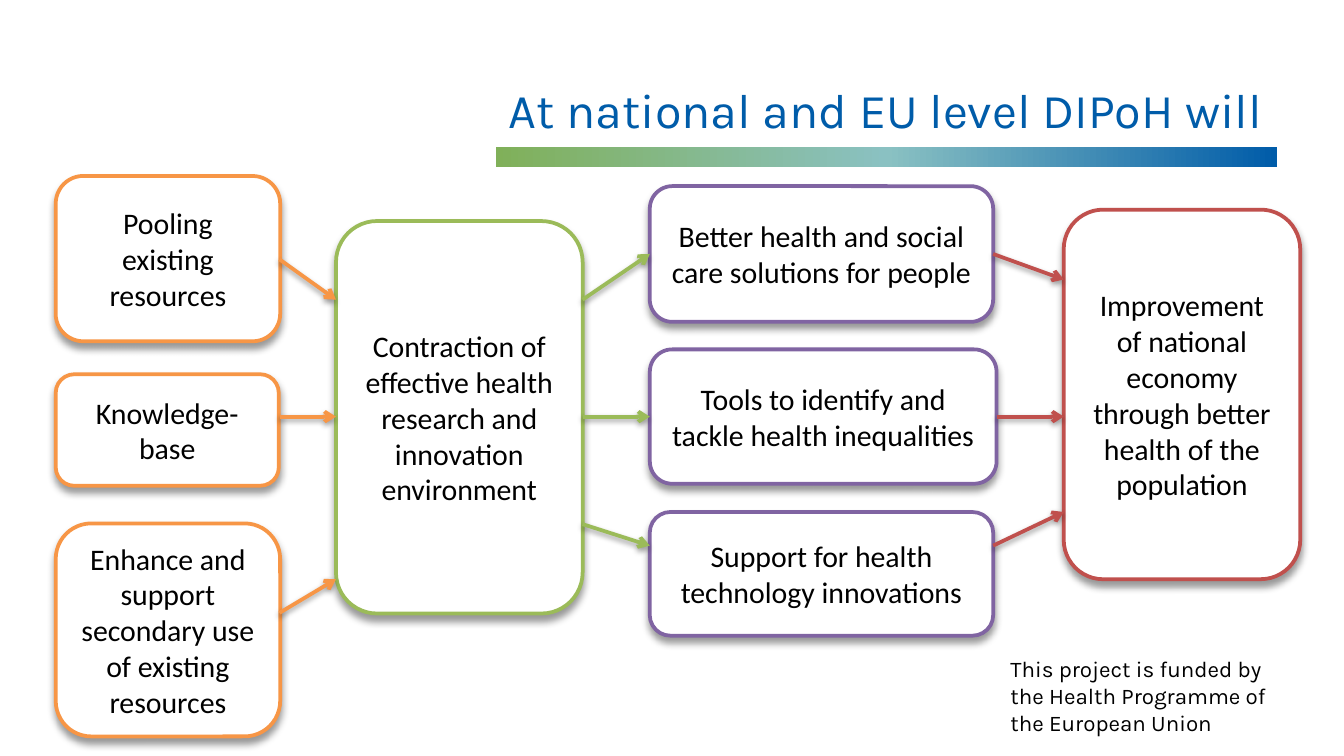
import pptx
import pptx.util
import pptx.oxml
import pptx.oxml.ns
import pptx.dml.color
import pptx.enum.text
import pptx.enum.shapes
import lxml.etree

SCALE = 4572
HUES = {
    "ink": "000000", "paper": "FFFFFF", "title": "005CA9",
    "green": "80B059", "teal": "8AC1C2", "blue": "005CA9",
    "source": "F79646", "hub": "9BBB59", "gain": "8064A2", "goal": "C0504D",
}
ALIGN = pptx.enum.text.PP_ALIGN
ANCHOR = pptx.enum.text.MSO_ANCHOR
KIND = pptx.enum.shapes.MSO_SHAPE


def emu(*nums):
    """Turn px lengths into EMU."""
    return [pptx.util.Emu(num * SCALE) for num in nums]


def hue(name):
    """Give the colour of a name."""
    return pptx.dml.color.RGBColor.from_string(HUES[name])


def apply(item, form):
    """Set attributes of an item from a dict."""
    for key, value in form.items():
        setattr(item, key, value)


def write(shape, text, size, face, tint, align, anchor):
    """Fill a shape with one formatted paragraph."""
    frame = shape.text_frame
    apply(frame, {"word_wrap": True, "vertical_anchor": anchor})
    para = frame.paragraphs[0]
    apply(para, {"text": text, "alignment": align})
    apply(para.font, {"size": pptx.util.Pt(size), "name": face})
    para.font.color.rgb = hue(tint)


def shade(parent, alpha, blur, dist):
    """Add a soft shadow that falls straight down."""
    shadow = lxml.etree.SubElement(parent, pptx.oxml.ns.qn("a:outerShdw"))
    form = {"blurRad": blur * 12700, "dist": dist * 12700, "dir": 5400000}
    for key, value in form.items():
        shadow.set(key, str(int(value)))
    shadow.set("rotWithShape", "0")
    color = lxml.etree.SubElement(shadow, pptx.oxml.ns.qn("a:srgbClr"), val=HUES["ink"])
    lxml.etree.SubElement(color, pptx.oxml.ns.qn("a:alpha"), val=str(alpha * 1000))


def stroke(line, tint):
    """Draw a line in a two point tint."""
    line.color.rgb = hue(tint)
    line.width = pptx.util.Pt(2)


def heading(slide, box):
    """Place the title above its gradient bar."""
    left, top, wide, high = box
    title = slide.shapes.add_textbox(*emu(left, top, wide, high - 32))
    write(title, "At national and EU level DIPoH will", 26, "Karla", "title",
          ALIGN.RIGHT, ANCHOR.BOTTOM)
    bar = slide.shapes.add_shape(
        KIND.RECTANGLE, *emu(left + 638, top + high - 29, wide - 638, 29))
    bar.shadow.inherit = False
    stops = "".join(
        f'<a:gs pos="{spot * 50000}"><a:srgbClr val="{HUES[name]}"/></a:gs>'
        for spot, name in enumerate(("green", "teal", "blue")))
    blend = pptx.oxml.parse_xml(
        f'<a:gradFill {pptx.oxml.ns.nsdecls("a")}><a:gsLst>{stops}</a:gsLst>'
        '<a:lin ang="0" scaled="0"/></a:gradFill>')
    bar._element.spPr.insert(2, blend)
    bar.line.fill.background()


def column(slide, box, tint, nodes):
    """Place a column of rounded nodes given as top, width, height, text."""
    left, top = box[:2]
    for down, wide, high, text in nodes:
        node = slide.shapes.add_shape(
            KIND.ROUNDED_RECTANGLE, *emu(left, top + down, wide, high))
        node.fill.solid()
        node.fill.fore_color.rgb = hue("paper")
        stroke(node.line, tint)
        node.shadow.inherit = False
        shade(node._element.spPr.find(pptx.oxml.ns.qn("a:effectLst")), 40, 4, 3)
        write(node, text, 16, "Calibri", "ink", ALIGN.CENTER, ANCHOR.MIDDLE)


def links(slide, box, tint, rows):
    """Cross a gap with arrows given as indent, start and end height."""
    left, top, wide = box[:3]
    for inset, start, end in rows:
        link = slide.shapes.add_connector(
            pptx.enum.shapes.MSO_CONNECTOR.STRAIGHT,
            *emu(left + inset, top + start, left + wide, top + end))
        stroke(link.line, tint)
        props = link._element.spPr
        line = props.find(pptx.oxml.ns.qn("a:ln"))
        lxml.etree.SubElement(line, pptx.oxml.ns.qn("a:tailEnd"), type="arrow")
        effect = lxml.etree.SubElement(props, pptx.oxml.ns.qn("a:effectLst"))
        shade(effect, 38, 3.1, 1.6)


def footer(slide, box):
    """Place the funding note."""
    note = slide.shapes.add_textbox(*emu(*box))
    write(note, "This project is funded by the Health Programme of the European Union",
          12, "Karla", "ink", ALIGN.LEFT, ANCHOR.TOP)


def main():
    """Build and save the slide."""
    deck = pptx.Presentation()
    wide, high = emu(2000, 1125)
    apply(deck, {"slide_width": wide, "slide_height": high})
    slide = deck.slides.add_slide(deck.slide_layouts[6])
    footer(slide, (1484, 965, 434, 142))
    heading(slide, (100, 46, 1800, 202))
    column(slide, (83, 262, 334, 834), "source", [
        (0, 334, 246, "Pooling existing resources"),
        (295, 332, 166, "Knowledge-base"),
        (517, 334, 317, "Enhance and support secondary use of existing resources"),
    ])
    column(slide, (500, 329, 367, 584), "hub", [
        (0, 367, 584, "Contraction of effective health research and innovation environment"),
    ])
    column(slide, (967, 277, 516, 669), "gain", [
        (0, 511, 202, "Better health and social care solutions for people"),
        (243, 516, 200, "Tools to identify and tackle health inequalities"),
        (485, 511, 184, "Support for health technology innovations"),
    ])
    column(slide, (1583, 312, 352, 550), "goal", [
        (0, 352, 550, "Improvement of national economy through better health of the population"),
    ])
    links(slide, (416, 386, 84, 526), "source", [(0, 0, 60), (0, 234, 234), (0, 526, 476)])
    links(slide, (867, 378, 100, 434), "hub", [(0, 68, 0), (0, 402, 434), (0, 242, 242)])
    links(slide, (1478, 378, 105, 434), "goal", [(0, 0, 38), (0, 434, 384), (5, 242, 242)])
    deck.save("out.pptx")


if __name__ == "__main__":
    main()
